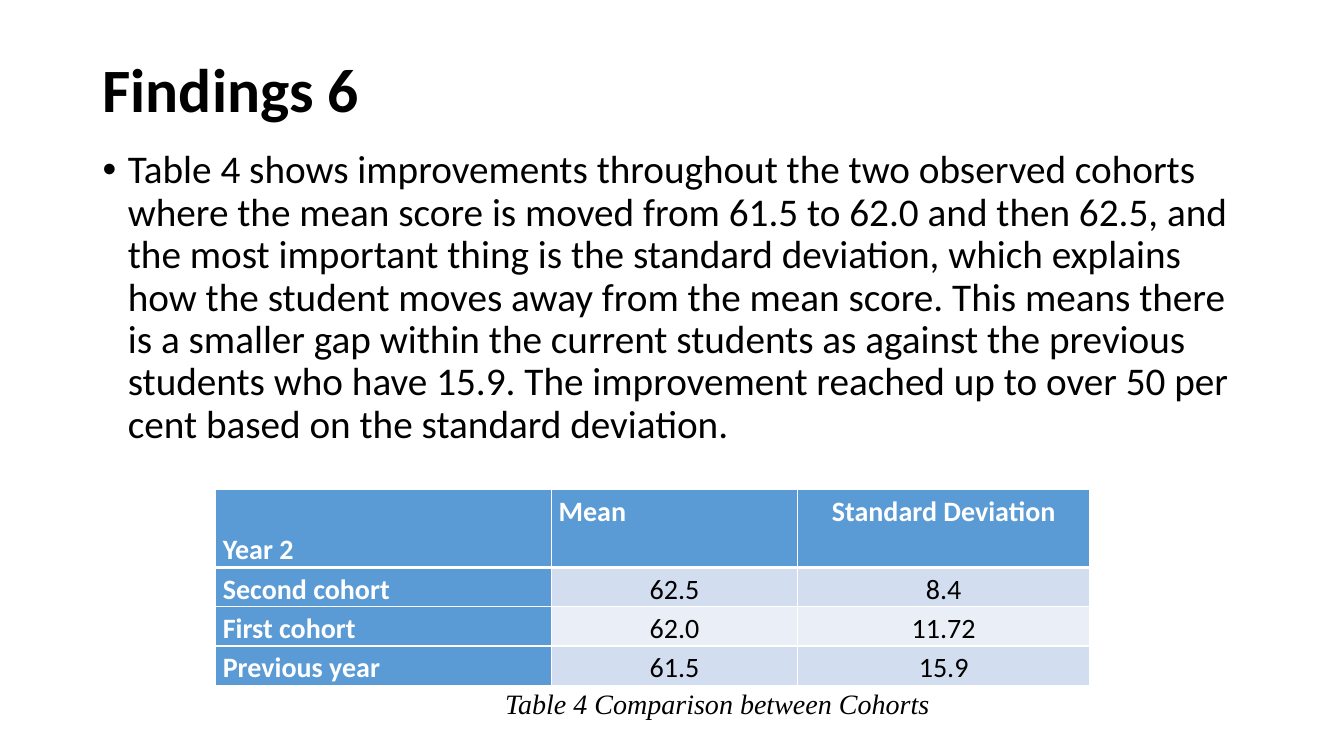
from pptx import Presentation
from pptx.dml.color import RGBColor
from pptx.enum.text import MSO_ANCHOR as Anchor, PP_ALIGN as Align
from pptx.oxml import parse_xml
from pptx.oxml.ns import nsdecls
from pptx.util import Pt

PX = 9144  # EMU per px, 100 px to the inch
SLIDE_W, SLIDE_H = 1333, 750

BLACK = RGBColor(0x00, 0x00, 0x00)
WHITE = RGBColor(0xFF, 0xFF, 0xFF)
BLUE = RGBColor(0x5B, 0x9B, 0xD5)
BANDS = (RGBColor(0xD2, 0xDE, 0xEF), RGBColor(0xEA, 0xEF, 0xF7))

FINDING = (
    "Table 4 shows improvements throughout the two observed cohorts where the "
    "mean score is moved from 61.5 to 62.0 and then 62.5, and the most important "
    "thing is the standard deviation, which explains how the student moves away "
    "from the mean score. This means there is a smaller gap within the current "
    "students as against the previous students who have 15.9. The improvement "
    "reached up to over 50 per cent based on the standard deviation."
)
COHORTS = (
    ("Year 2", "Mean", "Standard Deviation"),
    ("Second cohort", "62.5", "8.4"),
    ("First cohort", "62.0", "11.72"),
    ("Previous year", "61.5", "15.9"),
)
COLUMN_WIDTHS = (333, 244, 290)
ROW_HEIGHTS = (77, 39, 39, 39)


def emu(*lengths):
    return [length * PX for length in lengths]


def write(frame, text, size, color=BLACK, font="Calibri", bold=False,
          italic=False, align=Align.LEFT, anchor=Anchor.TOP, line=1.0,
          before=0, after=0):
    """Fill a text frame with one formatted paragraph."""
    frame.word_wrap = True
    frame.vertical_anchor = anchor
    paragraph = frame.paragraphs[0]
    paragraph.alignment = align
    paragraph.line_spacing = line
    paragraph.space_before, paragraph.space_after = Pt(before), Pt(after)
    run = paragraph.add_run()
    run.text = text
    run.font.size, run.font.name = Pt(size), font
    run.font.bold, run.font.italic = bold, italic
    run.font.color.rgb = color
    return paragraph


def add_text(slide, box, text, size, **style):
    frame = slide.shapes.add_textbox(*emu(*box)).text_frame
    return write(frame, text, size, **style)


def add_finding(slide, box):
    paragraph = add_text(slide, box, FINDING, 28, line=0.9, before=10)
    properties = paragraph._p.get_or_add_pPr()
    indent, = emu(25)
    properties.set("marL", str(indent))
    properties.set("indent", str(-indent))
    properties.append(parse_xml(f'<a:buFont {nsdecls("a")} typeface="Arial"/>'))
    properties.append(parse_xml(f'<a:buChar {nsdecls("a")} char="•"/>'))


def add_borders(cell, **widths):
    """Draw white cell borders; must come before the cell fill."""
    properties = cell._tc.get_or_add_tcPr()
    for side in "LRTB":
        width = Pt(widths.get(side, 1))
        properties.append(parse_xml(
            f'<a:ln{side} {nsdecls("a")} w="{width}"><a:solidFill>'
            f'<a:srgbClr val="{WHITE}"/></a:solidFill></a:ln{side}>'))


def add_cohort_table(slide, left, top):
    box = emu(left, top, sum(COLUMN_WIDTHS), sum(ROW_HEIGHTS))
    table = slide.shapes.add_table(len(COHORTS), len(COLUMN_WIDTHS), *box).table
    table.first_col = True
    for column, width in zip(table.columns, emu(*COLUMN_WIDTHS)):
        column.width = width
    for row, height in zip(table.rows, emu(*ROW_HEIGHTS)):
        row.height = height

    for r, values in enumerate(COHORTS):
        for c, value in enumerate(values):
            cell = table.cell(r, c)
            heading = r == 0 or c == 0
            centred = c == 2 or (c == 1 and r > 0)
            at_bottom = (r, c) == (0, 0) or (r == len(COHORTS) - 1 and c > 0)
            cell.margin_left, cell.margin_right = emu(7, 7)
            cell.margin_top = cell.margin_bottom = 0
            cell.vertical_anchor = Anchor.BOTTOM if at_bottom else Anchor.TOP
            # A thick rule parts the header from the cohorts
            add_borders(cell, T=3 if r == 1 else 1, B=3 if r == 0 else 1)
            cell.fill.solid()
            cell.fill.fore_color.rgb = BLUE if heading else BANDS[(r - 1) % 2]
            write(cell.text_frame, value, 20, bold=heading, line=1.15,
                  color=WHITE if heading else BLACK,
                  align=Align.CENTER if centred else Align.LEFT,
                  anchor=cell.vertical_anchor)


def add_findings_slide(deck):
    slide = deck.slides.add_slide(deck.slide_layouts[6])
    # Title and finding
    add_text(slide, (92, 40, 1150, 104), "Findings 6", 44, bold=True,
             anchor=Anchor.MIDDLE, line=0.9)
    add_finding(slide, (92, 144, 1150, 620))
    # Table and its caption
    add_cohort_table(slide, 214, 486)
    add_text(slide, (446, 676, 531, 44), "Table 4 Comparison between Cohorts",
             20, font="Times New Roman", italic=True, align=Align.CENTER,
             after=10)


def main():
    deck = Presentation()
    deck.slide_width, deck.slide_height = emu(SLIDE_W, SLIDE_H)
    add_findings_slide(deck)
    deck.save("out.pptx")


if __name__ == "__main__":
    main()
